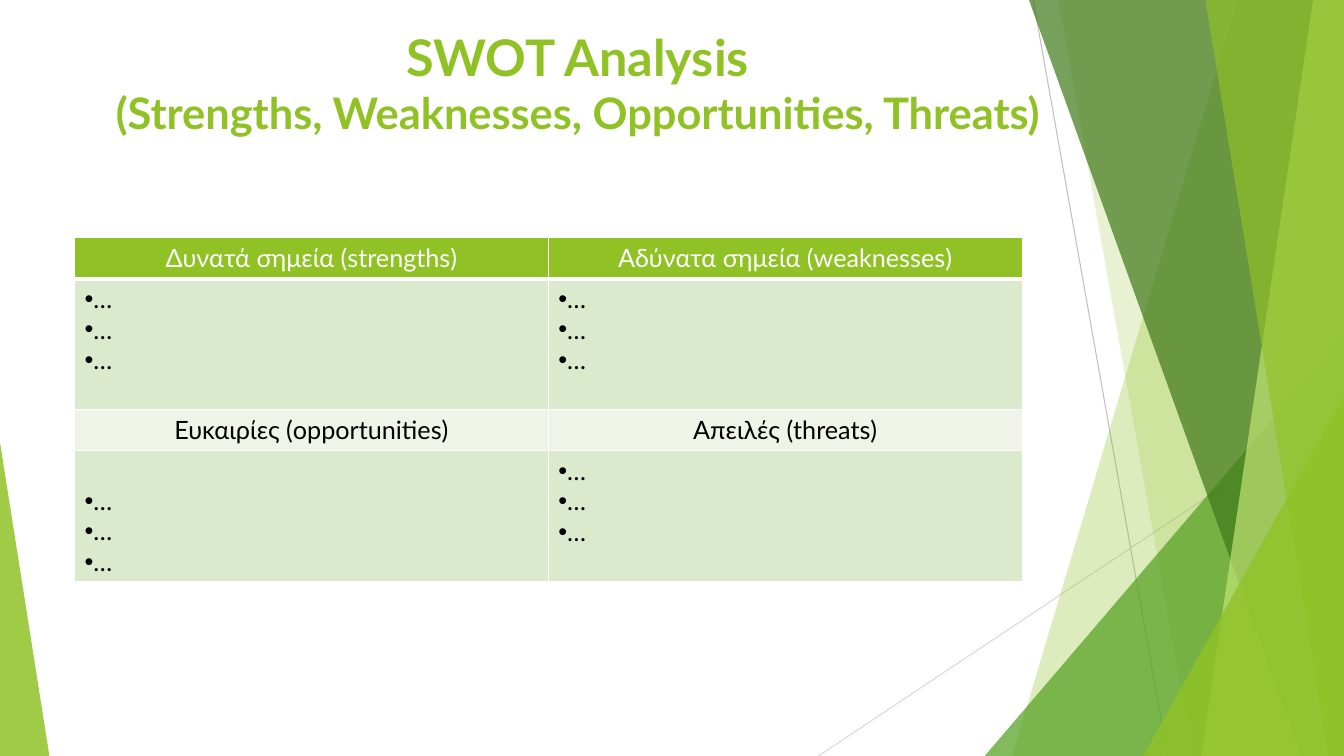
import pptx
import pptx.util
import pptx.dml.color
import pptx.enum.shapes
import pptx.enum.text
import pptx.oxml
import pptx.oxml.ns
import lxml.etree

Pt = pptx.util.Pt
RGB = pptx.dml.color.RGBColor
Align = pptx.enum.text.PP_ALIGN
Anchor = pptx.enum.text.MSO_ANCHOR
qn = pptx.oxml.ns.qn

WIDE, HIGH = 960, 540
FONT = "Lato"
LIME = RGB(0x90, 0xC2, 0x26)
GREEN = RGB(0x54, 0xA0, 0x21)
DARK = RGB(0x3F, 0x78, 0x19)
PALE = RGB(0xC0, 0xE4, 0x74)
GREY = RGB(0xBF, 0xBF, 0xBF)
LIGHT = RGB(0xD9, 0xD9, 0xD9)
WHITE = RGB(0xFF, 0xFF, 0xFF)
BLACK = RGB(0x00, 0x00, 0x00)
BODY = RGB(0xDB, 0xE9, 0xCD)
HEAD = RGB(0xEE, 0xF4, 0xE8)


def add_line(slide, x1, y1, x2, y2, color):
    kind = pptx.enum.shapes.MSO_CONNECTOR.STRAIGHT
    line = slide.shapes.add_connector(kind, Pt(x1), Pt(y1), Pt(x2), Pt(y2))
    line.line.color.rgb = color
    line.line.width = Pt(0.75)
    lxml.etree.SubElement(line._element.spPr, qn("a:effectLst"))


def paint(shape, color, alpha):
    shape.shadow.inherit = False
    shape.line.fill.background()
    shape.fill.solid()
    shape.fill.fore_color.rgb = color
    tint = shape._element.spPr.find(qn("a:solidFill"))[0]
    lxml.etree.SubElement(tint, qn("a:alpha")).set("val", str(alpha * 1000))


def add_band(slide, top, base, color, alpha):
    form = slide.shapes.build_freeform(Pt(top), 0)
    edge = [(WIDE, 0), (WIDE, HIGH), (base, HIGH)]
    form.add_line_segments([(Pt(x), Pt(y)) for x, y in edge])
    paint(form.convert_to_shape(), color, alpha)


def add_peak(slide, left, top, width, apex, color, alpha):
    kind = pptx.enum.shapes.MSO_SHAPE.ISOSCELES_TRIANGLE
    peak = slide.shapes.add_shape(
        kind, Pt(left), Pt(top), Pt(width), Pt(HIGH - top))
    peak.adjustments[0] = apex
    paint(peak, color, alpha)


def style(para, size, color, align, bold=False):
    para.alignment = align
    font = para.font
    font.name, font.size, font.bold = FONT, Pt(size), bold
    font.color.rgb = color


def add_title(slide, lines):
    box = slide.shapes.add_textbox(Pt(53.3), Pt(15.1), Pt(718.6), Pt(136.8))
    frame = box.text_frame
    frame.word_wrap = True
    frame.text = "\n".join(text for text, size in lines)
    for para, (text, size) in zip(frame.paragraphs, lines):
        style(para, size, LIME, Align.CENTER, True)


def add_edge(cell, sides):
    props = cell._tc.get_or_add_tcPr()
    for spot, (side, width) in enumerate(sides.items()):
        props.insert(spot, pptx.oxml.parse_xml(
            f'<a:ln{side} xmlns:a="{pptx.oxml.ns.nsdecls("a").split(chr(34))[1]}"'
            f' w="{Pt(width)}"><a:solidFill><a:srgbClr val="{WHITE}"/>'
            f'</a:solidFill></a:ln{side}>'))


def fill_cell(cell, lines, fill, color, bullet):
    cell.fill.solid()
    cell.fill.fore_color.rgb = fill
    cell.text = "\n".join(lines)
    for para in cell.text_frame.paragraphs:
        style(para, 18, color, Align.LEFT if bullet else Align.CENTER)
        if bullet:
            props = para._p.get_or_add_pPr()
            props.set("marL", "0")
            props.set("indent", "0")
            font = lxml.etree.Element(qn("a:buFont"))
            font.set("typeface", "Arial")
            mark = lxml.etree.Element(qn("a:buChar"))
            mark.set("char", "•")
            props.insert(0, font)
            props.insert(1, mark)


def add_swot(slide):
    dots = ["…"] * 3
    rows = [
        ([["Δυνατά σημεία (strengths)"], ["Αδύνατα σημεία (weaknesses)"]],
         LIME, WHITE, False, 29.3),
        ([dots, dots], BODY, BLACK, True, 93.5),
        ([["Ευκαιρίες (opportunities)"], ["Απειλές (threats)"]],
         HEAD, BLACK, False, 29.3),
        ([dots, dots], BODY, BLACK, True, 93.5),
    ]
    frame = slide.shapes.add_table(
        4, 2, Pt(53.3), Pt(169.9), Pt(676.8), Pt(245.6))
    table = frame.table
    for row, (texts, fill, color, bullet, high) in enumerate(rows):
        table.rows[row].height = Pt(high)
        for col, lines in enumerate(texts):
            cell = table.cell(row, col)
            fill_cell(cell, lines, fill, color, bullet)
            add_edge(cell, {"L": 1, "R": 1, "T": 3 if row == 1 else 1,
                            "B": 3 if row == 0 else 1})
    table.cell(3, 0).vertical_anchor = Anchor.BOTTOM


def main():
    deck = pptx.Presentation()
    deck.slide_width, deck.slide_height = Pt(WIDE), Pt(HIGH)
    slide = deck.slides.add_slide(deck.slide_layouts[6])
    add_line(slide, 738, 0, 834, HIGH, GREY)
    add_line(slide, WIDE, 290, 584.6, HIGH, LIGHT)
    add_band(slide, 884, 723, LIME, 30)
    add_band(slide, 756, 852, LIME, 20)
    add_peak(slide, 703.4, 239.8, 256.6, 1, GREEN, 72)
    add_band(slide, 735, 929.5, DARK, 70)
    add_band(slide, 938, 858, PALE, 70)
    add_band(slide, 861, 949, LIME, 65)
    add_peak(slide, 816.5, 283, 143.5, 1, LIME, 80)
    add_peak(slide, 0, 316, 35.3, 0, LIME, 85)
    add_title(slide, [
        ("SWOT Analysis", 36),
        ("(Strengths, Weaknesses, Opportunities, Threats)", 31)])
    add_swot(slide)
    deck.save("out.pptx")


if __name__ == "__main__":
    main()
